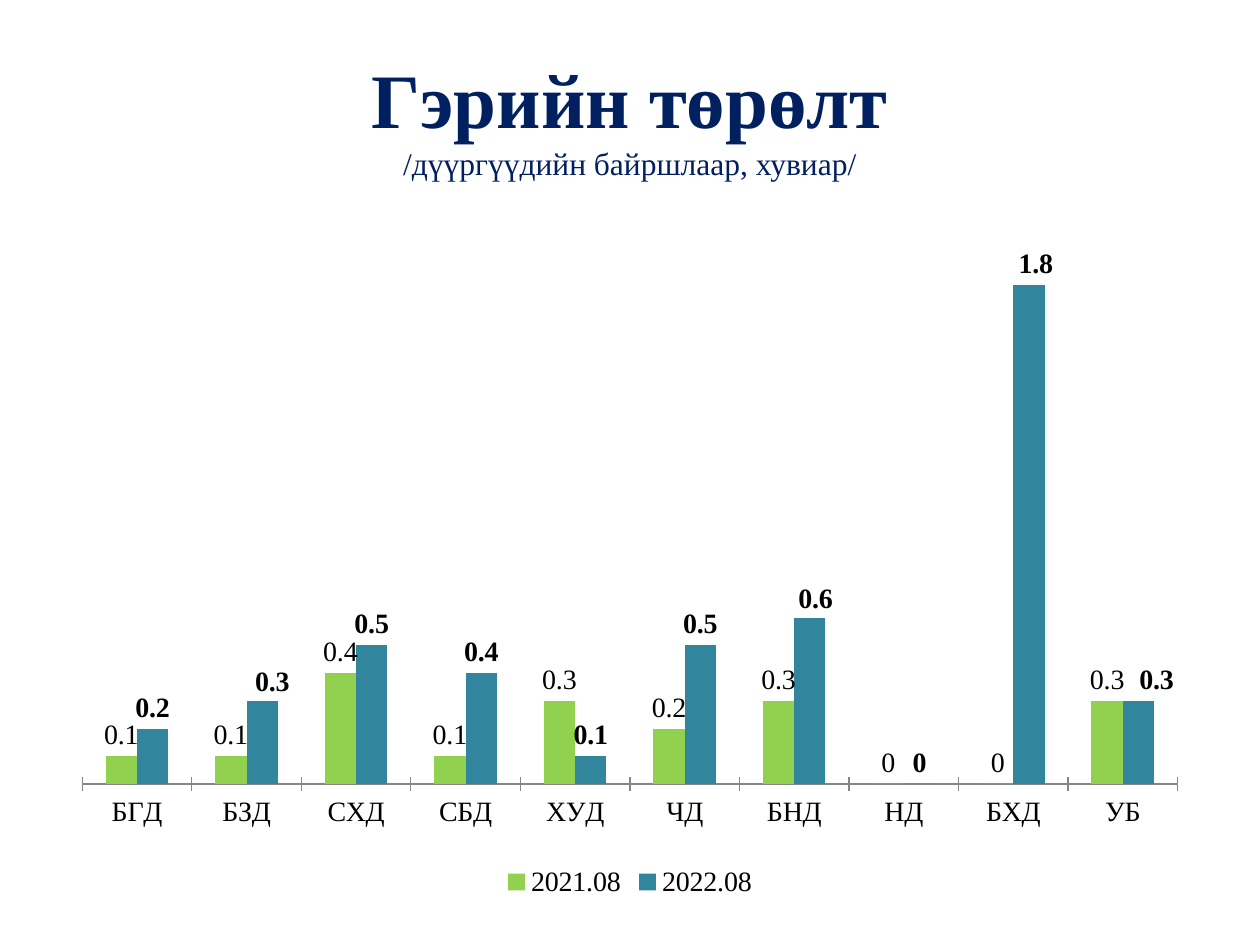
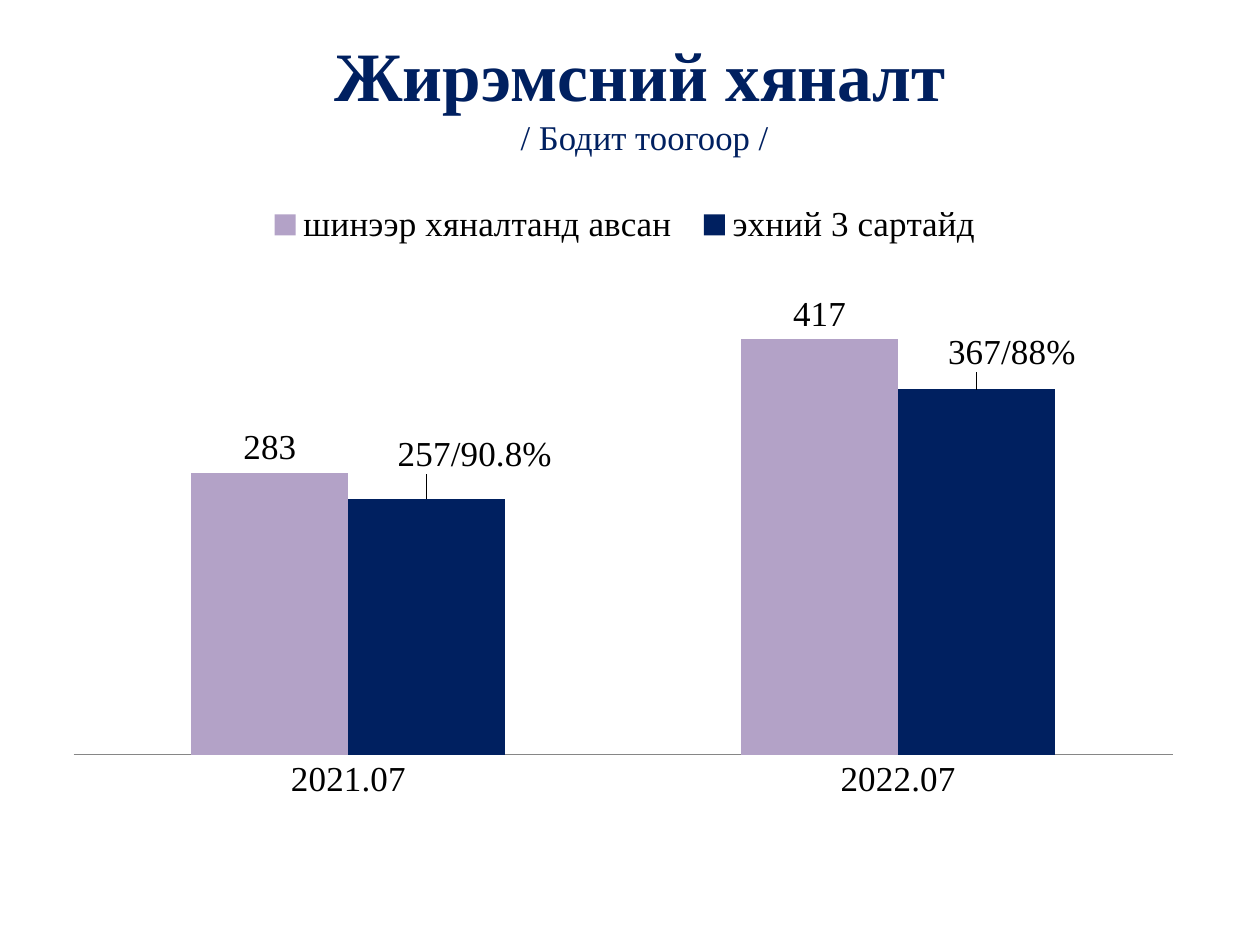
from dataclasses import dataclass, field

from lxml.etree import SubElement
from pptx import Presentation
from pptx.chart.chart import Chart
from pptx.chart.data import CategoryChartData
from pptx.dml.color import RGBColor
from pptx.enum.chart import (XL_CHART_TYPE, XL_LABEL_POSITION, XL_LEGEND_POSITION,
                             XL_TICK_LABEL_POSITION, XL_TICK_MARK)
from pptx.enum.text import MSO_ANCHOR, MSO_AUTO_SIZE, PP_ALIGN
from pptx.oxml.ns import qn
from pptx.util import Cm, Pt

FONT = "Times New Roman"
NAVY = "002060"
BLACK = "000000"
AXIS_GRAY = "868686"
TITLE_ONLY = 5


@dataclass
class MovedLabel:
    """A data label shifted by a fraction of the chart, with optional own text."""
    point: int
    dx: float
    dy: float = 0
    text: str = ""


@dataclass
class Series:
    name: str
    values: list[float]
    color: str
    bold: bool = False
    moved_labels: list[MovedLabel] = field(default_factory=list)


@dataclass
class ChartSlide:
    title: str
    subtitle: str
    title_size: float
    subtitle_size: float
    title_box: tuple[float, ...]   # left, top, width, height in cm
    chart_box: tuple[float, ...]
    plot_area: tuple[float, ...]   # x, y, w, h as fractions of the chart
    categories: list[str]
    series: list[Series]
    size: float
    maximum: float
    legend: XL_LEGEND_POSITION
    tick_mark: XL_TICK_MARK


SLIDES = [
    ChartSlide(
        "Гэрийн төрөлт", "/дүүргүүдийн байршлаар, хувиар/", 44, 18,
        title_box=(1.27, 0.76, 22.86, 3.18), chart_box=(1.27, 4.24, 22.86, 13.97),
        plot_area=(0.017, 0.028, 0.966, 0.8),
        categories=["БГД", "БЗД", "СХД", "СБД", "ХУД", "ЧД", "БНД", "НД", "БХД", "УБ"],
        series=[
            Series("2021.08", [0.1, 0.1, 0.4, 0.1, 0.3, 0.2, 0.3, 0, 0, 0.3], "92D050"),
            Series("2022.08", [0.2, 0.3, 0.5, 0.4, 0.1, 0.5, 0.6, 0, 1.8, 0.3], "31859C",
                   bold=True,
                   moved_labels=[MovedLabel(1, 0.009, 0.003), MovedLabel(6, 0.005, 0.003),
                                 MovedLabel(8, 0.006), MovedLabel(9, 0.016)]),
        ],
        size=16, maximum=2, legend=XL_LEGEND_POSITION.BOTTOM, tick_mark=XL_TICK_MARK.CROSS),
    ChartSlide(
        "Жирэмсний хяналт", " / Бодит тоогоор /", 39.6, 19.8,
        title_box=(0.84, 0.43, 24.13, 2.97), chart_box=(1.07, 3.81, 23.06, 14.17),
        plot_area=(0.018, 0.167, 0.961, 0.638),
        categories=["2021.07", "2022.07"],
        series=[
            Series("шинээр хяналтанд авсан ", [283, 417], "B3A2C7"),
            Series("эхний 3 сартайд", [257, 367], NAVY,
                   moved_labels=[MovedLabel(0, 0.042, -0.027, "257/90.8%"),
                                 MovedLabel(1, 0.031, -0.017, "367/88%")]),
        ],
        size=20, maximum=450, legend=XL_LEGEND_POSITION.TOP, tick_mark=XL_TICK_MARK.NONE),
]


def rgb(color: str) -> RGBColor:
    return RGBColor.from_string(color)


def format_font(font, size: float, color: str = BLACK, bold: bool = False) -> None:
    font.name = FONT
    font.size = Pt(size)
    font.bold = bold
    font.color.rgb = rgb(color)


def add_text(paragraph, text: str, **font_format) -> None:
    run = paragraph.add_run()
    run.text = text
    format_font(run.font, **font_format)


def add_manual_layout(layout, **settings) -> None:
    manual = SubElement(layout, qn("c:manualLayout"))
    for name, value in settings.items():
        SubElement(manual, qn(f"c:{name}")).set("val", str(value))


def fill_title(slide, content: ChartSlide) -> None:
    title = slide.shapes.title
    title.left, title.top, title.width, title.height = map(Cm, content.title_box)
    frame = title.text_frame
    frame.auto_size = MSO_AUTO_SIZE.NONE
    frame.vertical_anchor = MSO_ANCHOR.MIDDLE
    paragraph = frame.paragraphs[0]
    paragraph.alignment = PP_ALIGN.CENTER
    add_text(paragraph, content.title, size=content.title_size, color=NAVY, bold=True)
    paragraph.add_line_break()
    add_text(paragraph, content.subtitle, size=content.subtitle_size, color=NAVY)


def move_label(series, moved: MovedLabel, size: float, bold: bool) -> None:
    label = series.points[moved.point].data_label
    if moved.text:
        add_text(label.text_frame.paragraphs[0], moved.text, size=size, bold=bold)
    else:
        format_font(label.font, size, bold=bold)
    label.position = XL_LABEL_POSITION.OUTSIDE_END
    # The layout element must follow the index of its label
    index = series._element.xpath(f"c:dLbls/c:dLbl/c:idx[@val='{moved.point}']")[0]
    layout = SubElement(index.getparent(), qn("c:layout"))
    index.addnext(layout)
    add_manual_layout(layout, x=moved.dx, y=moved.dy)


def style_series(series, content: Series, size: float) -> None:
    series.format.fill.solid()
    series.format.fill.fore_color.rgb = rgb(content.color)
    series.invert_if_negative = False
    labels = series.data_labels
    labels.show_value = True
    labels.number_format = "General"
    labels.number_format_is_linked = False
    labels.position = XL_LABEL_POSITION.OUTSIDE_END
    format_font(labels.font, size, bold=content.bold)
    for moved in content.moved_labels:
        move_label(series, moved, size, content.bold)


def style_axes(chart: Chart, content: ChartSlide) -> None:
    category_axis = chart.category_axis
    category_axis.major_tick_mark = content.tick_mark
    category_axis.minor_tick_mark = XL_TICK_MARK.NONE
    category_axis.tick_label_position = XL_TICK_LABEL_POSITION.NEXT_TO_AXIS
    category_axis.format.line.color.rgb = rgb(AXIS_GRAY)
    category_axis.format.line.width = Pt(0.75)
    value_axis = chart.value_axis
    value_axis.visible = False
    value_axis.has_major_gridlines = False
    value_axis.minimum_scale = 0
    value_axis.maximum_scale = content.maximum


def add_column_chart(slide, content: ChartSlide) -> None:
    data = CategoryChartData()
    data.categories = content.categories
    for series in content.series:
        data.add_series(series.name, series.values)
    chart = slide.shapes.add_chart(
        XL_CHART_TYPE.COLUMN_CLUSTERED, *map(Cm, content.chart_box), data).chart
    chart.has_title = False
    format_font(chart.font, content.size)

    # Legend
    chart.has_legend = True
    chart.legend.position = content.legend
    chart.legend.include_in_layout = False
    format_font(chart.legend.font, content.size)

    # Columns and axes
    plot = chart.plots[0]
    plot.gap_width = 150
    plot.overlap = 0
    plot.vary_by_categories = False
    for series, series_content in zip(plot.series, content.series):
        style_series(series, series_content, content.size)
    style_axes(chart, content)

    # Fixed inner plot area
    plot_area = chart._chartSpace.chart.plotArea
    layout = plot_area.find(qn("c:layout"))
    if layout is None:
        layout = SubElement(plot_area, qn("c:layout"))
        plot_area.insert(0, layout)
    x, y, w, h = content.plot_area
    add_manual_layout(layout, layoutTarget="inner", xMode="edge", yMode="edge",
                      x=x, y=y, w=w, h=h)


def main() -> None:
    presentation = Presentation()
    presentation.slide_width = Cm(25.4)
    presentation.slide_height = Cm(19.05)
    for content in SLIDES:
        slide = presentation.slides.add_slide(presentation.slide_layouts[TITLE_ONLY])
        fill_title(slide, content)
        add_column_chart(slide, content)
    presentation.save("out.pptx")


if __name__ == "__main__":
    main()
